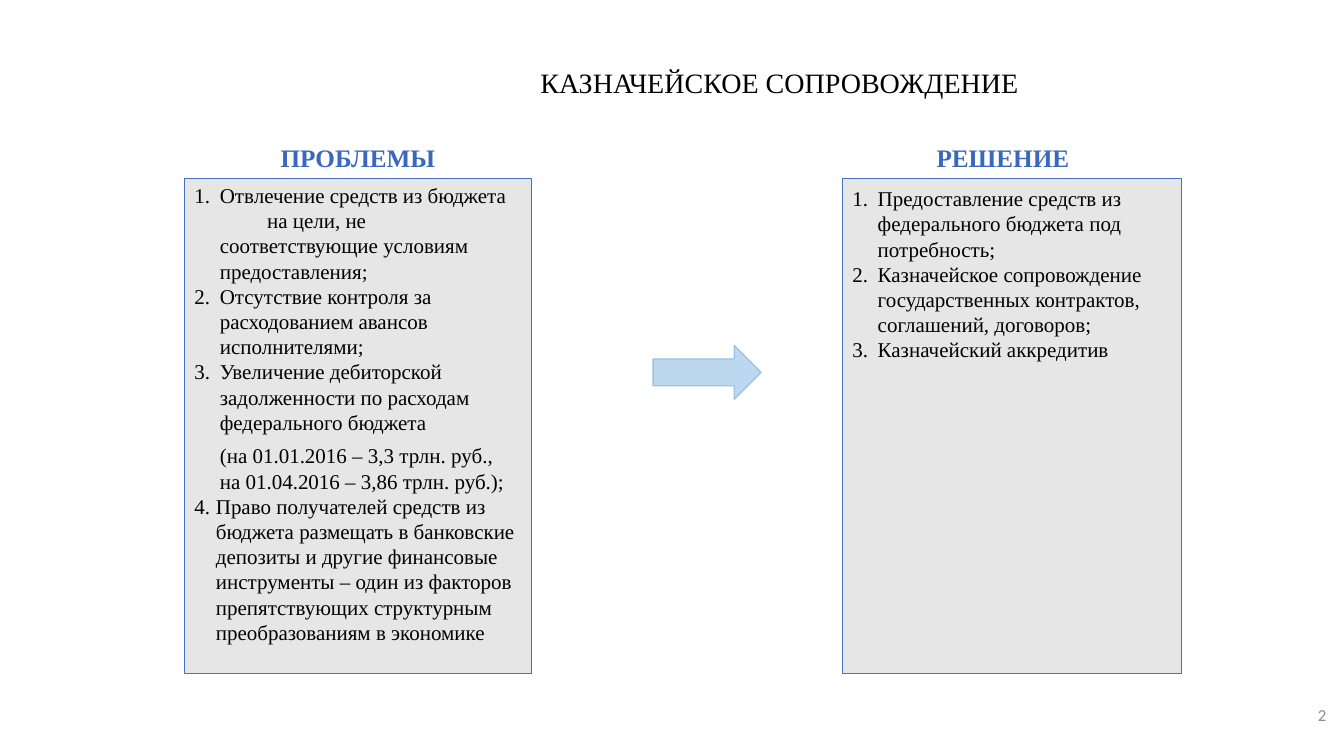
import pptx
import pptx.dml.color
import pptx.enum.shapes
import pptx.enum.text
import pptx.oxml
import pptx.oxml.ns
import pptx.util

Cm = pptx.util.Cm
Pt = pptx.util.Pt
ALIGN = pptx.enum.text.PP_ALIGN
ANCHOR = pptx.enum.text.MSO_ANCHOR

TITLE = "КАЗНАЧЕЙСКОЕ СОПРОВОЖДЕНИЕ"
PAGE_NUMBER = "2"
COLUMNS = [
    {
        "heading": "ПРОБЛЕМЫ",
        "heading_left": 4.65,
        "left": 4.65,
        "width": 8.74,
        "top_inset": 0.1,
        "items": [
            {"number": 1, "lines": ["Отвлечение средств из бюджета", "\tна цели, не",
                                    "соответствующие условиям предоставления;"]},
            {"number": 2, "lines": ["Отсутствие контроля за расходованием авансов исполнителями;"]},
            {"number": 3, "lines": ["Увеличение дебиторской задолженности по расходам федерального бюджета"]},
            {"number": None, "lines": ["(на 01.01.2016 – 3,3 трлн. руб.,", "на 01.04.2016 – 3,86 трлн. руб.);"]},
            {"number": 4, "indent": 0.54,
             "lines": ["Право получателей средств из бюджета размещать в банковские депозиты и другие "
                       "финансовые инструменты – один из факторов препятствующих структурным "
                       "преобразованиям в экономике"]},
        ],
    },
    {
        "heading": "РЕШЕНИЕ",
        "heading_left": 21.01,
        "left": 21.23,
        "width": 8.53,
        "top_inset": 0.18,
        "items": [
            {"number": 1, "lines": ["Предоставление средств из федерального бюджета под потребность;"]},
            {"number": 2, "lines": ["Казначейское сопровождение государственных контрактов, соглашений, договоров;"]},
            {"number": 3, "lines": ["Казначейский аккредитив"]},
        ],
    },
]
COLORS = {
    "text": "000000",
    "heading": "3968BD",
    "panel": "E7E6E6",
    "panel_line": "4472C4",
    "arrow": "BDD7EE",
    "arrow_line": "9DC3E6",
    "page_number": "8C8C8C",
}
SERIF = "Times New Roman"
PANEL_TOP, PANEL_HEIGHT = 4.5, 12.47
HEADING_TOP, HEADING_HEIGHT = 3.45, 1.02
LIST_INDENT = 0.64
TAB_POSITION = 1.83


def color(name):
    return pptx.dml.color.RGBColor.from_string(COLORS[name])


def place(shape, left, top, width, height):
    shape.left, shape.top, shape.width, shape.height = Cm(left), Cm(top), Cm(width), Cm(height)


def paint(shape, fill, line, line_width):
    shape.fill.solid()
    shape.fill.fore_color.rgb = color(fill)
    shape.line.color.rgb = color(line)
    shape.line.width = Pt(line_width)


def prepare_frame(shape, anchor, top_inset=0.13):
    frame = shape.text_frame
    frame.word_wrap = True
    frame.auto_size = pptx.enum.text.MSO_AUTO_SIZE.NONE
    frame.vertical_anchor = anchor
    frame.margin_left = frame.margin_right = Cm(0.25)
    frame.margin_top, frame.margin_bottom = Cm(top_inset), Cm(0.13)
    return frame


def write_lines(paragraph, lines, size, color_name, font_name=SERIF, bold=False):
    paragraph.space_before = paragraph.space_after = Pt(0)
    paragraph.line_spacing = 1.0
    for index, line in enumerate(lines):
        if index:
            paragraph.add_line_break()
        run = paragraph.add_run()
        run.text = line
        run.font.name = font_name
        run.font.size = Pt(size)
        run.font.bold = bold
        run.font.color.rgb = color(color_name)


def write_label(shape, text, size, color_name, alignment, anchor, font_name=SERIF, bold=False):
    paragraph = prepare_frame(shape, anchor).paragraphs[0]
    paragraph.alignment = alignment
    write_lines(paragraph, [text], size, color_name, font_name, bold)


def add_list_marks(paragraph, number, indent):
    properties = paragraph._p.get_or_add_pPr()
    properties.set("marL", str(Cm(indent)))
    properties.set("indent", str(-Cm(indent) if number else 0))
    namespace = pptx.oxml.ns.nsdecls("a")
    if number:
        bullet = f'<a:buAutoNum {namespace} type="arabicPeriod" startAt="{number}"/>'
    else:
        bullet = f"<a:buNone {namespace}/>"
    tabs = f'<a:tabLst {namespace}><a:tab pos="{Cm(TAB_POSITION)}" algn="l"/></a:tabLst>'
    for element in (bullet, tabs):
        properties.append(pptx.oxml.parse_xml(element))


def fill_list(shape, items, top_inset):
    frame = prepare_frame(shape, ANCHOR.TOP, top_inset)
    for index, item in enumerate(items):
        paragraph = frame.add_paragraph() if index else frame.paragraphs[0]
        add_list_marks(paragraph, item["number"], item.get("indent", LIST_INDENT))
        paragraph.alignment = ALIGN.LEFT
        write_lines(paragraph, item["lines"], 15, "text")
        if item["number"] is None:
            paragraph.space_before = Pt(6)


def main():
    presentation = pptx.Presentation()
    presentation.slide_width, presentation.slide_height = Cm(33.87), Cm(19.05)
    slide = presentation.slides.add_slide(presentation.slide_layouts.get_by_name("Comparison"))

    title = slide.shapes.title
    place(title, 10.07, 1.52, 19.15, 1.07)
    write_label(title, TITLE, 20, "text", ALIGN.CENTER, ANCHOR.TOP)

    for index, column in enumerate(COLUMNS):
        heading = slide.placeholders[1 + 2 * index]
        place(heading, column["heading_left"], HEADING_TOP, column["width"], HEADING_HEIGHT)
        write_label(heading, column["heading"], 18, "heading", ALIGN.CENTER, ANCHOR.TOP, bold=True)

        panel = slide.placeholders[2 + 2 * index]
        place(panel, column["left"], PANEL_TOP, column["width"], PANEL_HEIGHT)
        paint(panel, "panel", "panel_line", 0.5)
        fill_list(panel, column["items"], column["top_inset"])

    arrow = slide.shapes.add_shape(
        pptx.enum.shapes.MSO_SHAPE.RIGHT_ARROW, Cm(16.46), Cm(8.71), Cm(2.72), Cm(1.35))
    arrow.shadow.inherit = False
    paint(arrow, "arrow", "arrow_line", 1)

    page_number = slide.shapes.add_textbox(Cm(26.06), Cm(17.5), Cm(7.62), Cm(1.02))
    write_label(page_number, PAGE_NUMBER, 12, "page_number", ALIGN.RIGHT, ANCHOR.MIDDLE, "Calibri")

    presentation.save("out.pptx")


if __name__ == "__main__":
    main()
